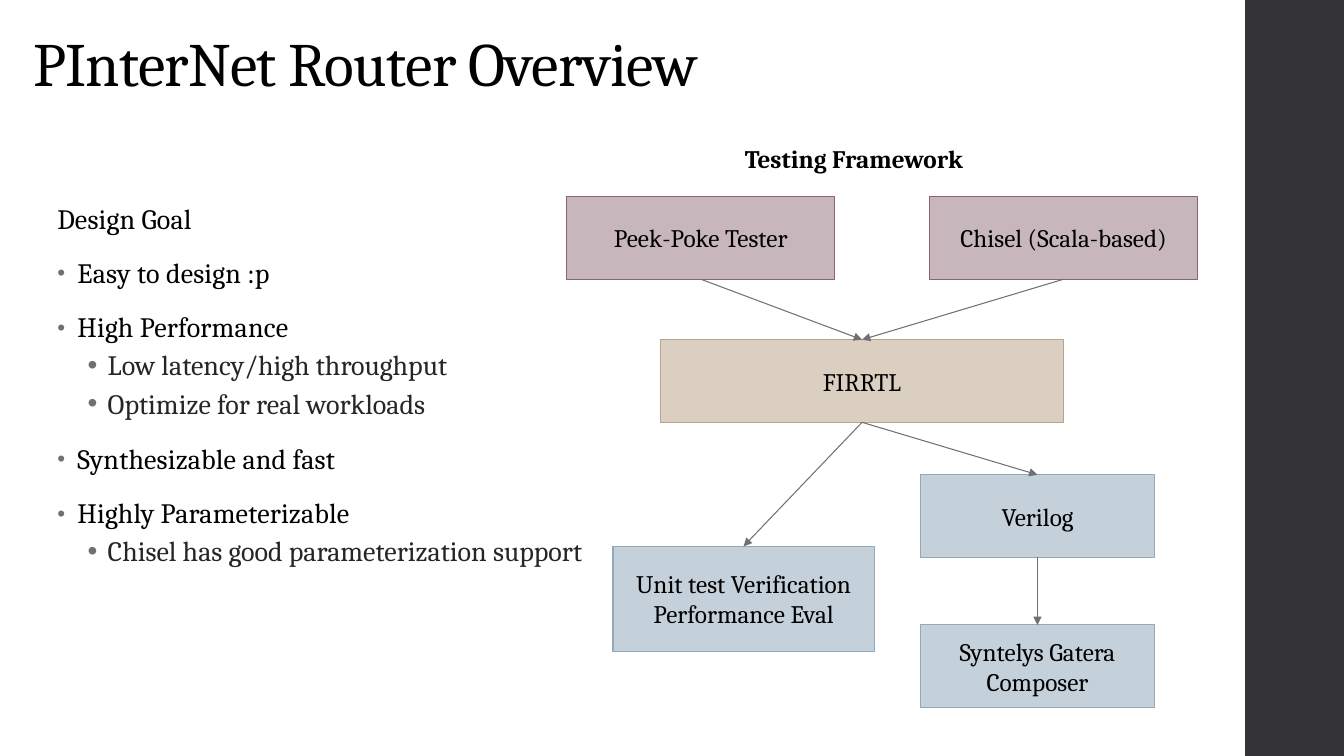
import pptx
import pptx.dml.color
import pptx.enum.shapes
import pptx.enum.text
import pptx.oxml
import pptx.oxml.ns
import pptx.util
from lxml import etree
from pptx.util import Inches, Pt

FONT = "Cambria"
BLACK, SOFT_BLACK, GREY, SIDEBAR = "000000", "262626", "6F6F74", "353537"

TITLE = "PInterNet Router Overview"
DIAGRAM_TITLE = "Testing Framework"

# (level, text); None is a line without a bullet
GOALS = [
    (None, "Design Goal"),
    (0, "Easy to design :p"),
    (0, "High Performance"),
    (1, "Low latency/high throughput"),
    (1, "Optimize for real workloads"),
    (0, "Synthesizable and fast"),
    (0, "Highly Parameterizable"),
    (1, "Chisel has good parameterization support"),
]

# fill, line
SOURCE = ("C7B6BC", "8D6374")
CORE = ("DBCFC2", "B9A489")
RESULT = ("C5D1DA", "92A9B9")

# stage: (lines, colours, left, top, width, height)
BOX_HEIGHT = 0.82
STAGES = {
    "chisel": (["Chisel (Scala-based)"], SOURCE, 9.22, 1.95, 2.66, BOX_HEIGHT),
    "firrtl": (["FIRRTL"], CORE, 6.55, 3.37, 4, BOX_HEIGHT),
    "verilog": (["Verilog"], RESULT, 9.13, 4.71, 2.32, BOX_HEIGHT),
    "synthesis": (["Syntelys Gatera Composer"], RESULT, 9.13, 6.2, 2.32, BOX_HEIGHT),
    "verification": (["Unit test Verification", "Performance Eval"],
                     RESULT, 6.08, 5.42, 2.59, 1.04),
    "tester": (["Peek-Poke Tester"], SOURCE, 5.62, 1.95, 2.66, BOX_HEIGHT),
}
FLOWS = [
    ("tester", "firrtl"),
    ("chisel", "firrtl"),
    ("firrtl", "verification"),
    ("firrtl", "verilog"),
    ("verilog", "synthesis"),
]
TOP_SITE, BOTTOM_SITE = 0, 2


def rgb(value):
    return pptx.dml.color.RGBColor.from_string(value)


def add_child(parent, tag, **attributes):
    return etree.SubElement(parent, pptx.oxml.ns.qn(tag), attributes)


def set_font(paragraph, size, color=BLACK, bold=False, tracking=0):
    """Style a whole paragraph; tracking is in hundredths of a point."""
    font = paragraph.font
    font.name, font.size, font.bold = FONT, Pt(size), bold
    font.color.rgb = rgb(color)
    if tracking:
        paragraph._p.pPr.find(pptx.oxml.ns.qn("a:defRPr")).set("spc", str(tracking))


def add_text_box(left, top, width, height, anchor=pptx.enum.text.MSO_ANCHOR.TOP):
    box = slide.shapes.add_textbox(Inches(left), Inches(top), Inches(width), Inches(height))
    box.text_frame.word_wrap = True
    box.text_frame.vertical_anchor = anchor
    return box.text_frame


def add_rectangle(left, top, width, height, fill, line=None):
    box = slide.shapes.add_shape(pptx.enum.shapes.MSO_SHAPE.RECTANGLE, Inches(left),
                                 Inches(top), Inches(width), Inches(height))
    box.shadow.inherit = False
    box.fill.solid()
    box.fill.fore_color.rgb = rgb(fill)
    if line:
        box.line.color.rgb = rgb(line)
        box.line.width = Pt(0.75)
    else:
        box.line.fill.background()
    return box


def add_bullet(paragraph, level):
    properties = paragraph._p.get_or_add_pPr()
    properties.set("marL", str(Inches((0.2, 0.5)[level])))
    properties.set("indent", str(Inches(-0.2)))
    add_child(add_child(properties, "a:buClr"), "a:srgbClr", val=GREY)
    if level == 0:
        add_child(properties, "a:buSzPct", val="80000")
    add_child(properties, "a:buFont", typeface="Arial")
    add_child(properties, "a:buChar", char="•")


def add_goal(paragraph, level, text):
    paragraph.text = text
    nested = level == 1
    paragraph.level = 1 if nested else 0
    paragraph.line_spacing = 0.9 if nested else 0.95
    paragraph.space_before = Pt(3 if nested else 14)
    paragraph.space_after = Pt(3 if nested else 2)
    if level is not None:
        add_bullet(paragraph, level)
    set_font(paragraph, 20, SOFT_BLACK if nested else BLACK, tracking=0 if nested else 10)


def add_stage(lines, colours, left, top, width, height):
    box = add_rectangle(left, top, width, height, *colours)
    frame = box.text_frame
    frame.word_wrap = True
    frame.vertical_anchor = pptx.enum.text.MSO_ANCHOR.MIDDLE
    frame.text = "\n".join(lines)
    for paragraph in frame.paragraphs:
        paragraph.alignment = pptx.enum.text.PP_ALIGN.CENTER
        set_font(paragraph, 18)
    return box


def add_flow(start, end):
    arrow = slide.shapes.add_connector(pptx.enum.shapes.MSO_CONNECTOR.STRAIGHT, 0, 0, 0, 0)
    arrow.begin_connect(start, BOTTOM_SITE)
    arrow.end_connect(end, TOP_SITE)
    arrow.line.color.rgb = rgb(GREY)
    arrow.line.width = Pt(0.75)
    add_child(arrow.line._get_or_add_ln(), "a:tailEnd", type="triangle")
    add_child(arrow._element.spPr, "a:effectLst")


presentation = pptx.Presentation()
presentation.slide_width, presentation.slide_height = Inches(13.33), Inches(7.5)
slide = presentation.slides.add_slide(presentation.slide_layouts[6])

add_rectangle(12.35, 0, 0.98, 7.5, SIDEBAR)

title = add_text_box(0.23, 0.17, 10.6, 0.87, pptx.enum.text.MSO_ANCHOR.BOTTOM).paragraphs[0]
title.text = TITLE
title.line_spacing = 0.9
set_font(title, 44, tracking=-50)

goals = add_text_box(0.47, 1.97, 5.88, 4.76)
for index, (level, text) in enumerate(GOALS):
    add_goal(goals.add_paragraph() if index else goals.paragraphs[0], level, text)

boxes = {stage: add_stage(*details) for stage, details in STAGES.items()}
for start, end in FLOWS:
    add_flow(boxes[start], boxes[end])

diagram_title = add_text_box(7.29, 1.37, 3.15, 0.4).paragraphs[0]
diagram_title.text = DIAGRAM_TITLE
set_font(diagram_title, 18, bold=True)

presentation.save("out.pptx")
